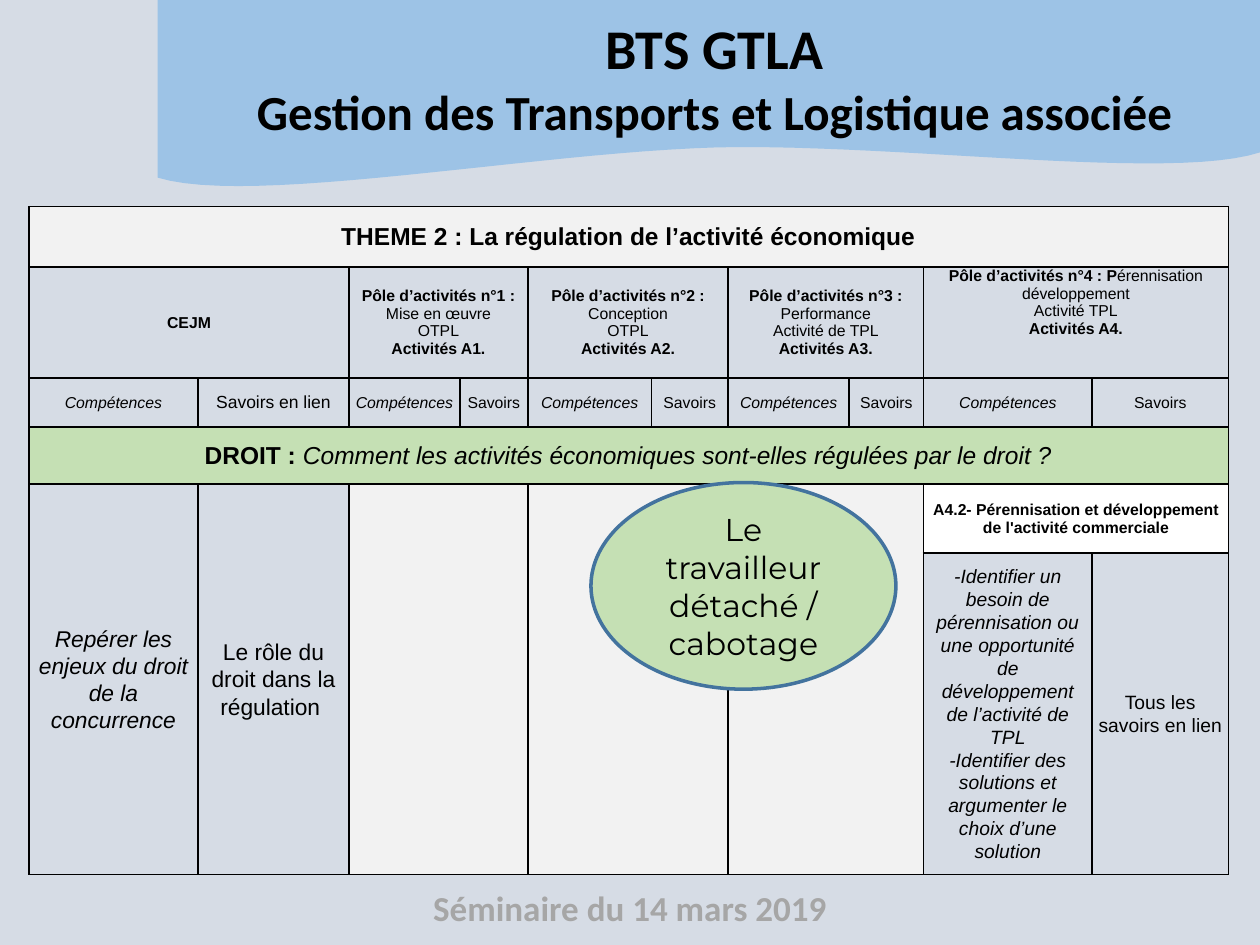
"""Build the BTS GTLA slide that links the law theme to the activity poles."""
import dataclasses
import typing

import lxml.etree
import pptx
import pptx.dml.color
import pptx.enum.shapes
import pptx.enum.text
import pptx.oxml
import pptx.oxml.ns
import pptx.util

RGB = pptx.dml.color.RGBColor
BACKGROUND = RGB(0xD6, 0xDC, 0xE5)
WAVE_BLUE = RGB(0x9D, 0xC3, 0xE6)
BLACK = RGB(0, 0, 0)
WHITE = RGB(0xFF, 0xFF, 0xFF)
FOOTER_GREY = RGB(0xA6, 0xA6, 0xA6)
PALE_GREY = RGB(0xF2, 0xF2, 0xF2)
GREEN = RGB(0xC5, 0xE0, 0xB4)
OUTLINE_BLUE = RGB(0x43, 0x73, 0x9E)

GRID_COLUMNS, GRID_ROWS = 100, 75
UNIT = pptx.util.Inches(0.1)
COLUMN_WIDTHS = (13.4, 12, 8.8, 5.4, 9.8, 6.1, 9.6, 5.9, 13.4, 10.8)
ROW_HEIGHTS = (4.8, 8.8, 3.9, 4.5, 5.5, 25.5)
MIDDLE = pptx.enum.text.MSO_ANCHOR.MIDDLE
TOP = pptx.enum.text.MSO_ANCHOR.TOP


class Run(typing.NamedTuple):
    text: str
    bold: bool = False
    italic: bool = False
    size: typing.Optional[float] = None


Paragraphs = typing.Sequence[typing.Sequence[Run]]


class Box(typing.NamedTuple):
    left: float
    top: float
    width: float
    height: float


@dataclasses.dataclass(frozen=True)
class Entry:
    row: int
    column: int
    paragraphs: Paragraphs = ()
    size: float = 9
    rows: int = 1
    columns: int = 1
    fill: typing.Optional[RGB] = None
    spacing: float = 1.0
    anchor: typing.Any = MIDDLE


def grid(value: float) -> int:
    return round(value * UNIT)


def place(box: Box) -> list[int]:
    return [grid(value) for value in box]


def write_text(frame, paragraphs: Paragraphs, *, size: float, font: str = "Arial",
               color: RGB = BLACK, spacing: float = 1.0) -> None:
    frame.word_wrap = True
    for index, runs in enumerate(paragraphs):
        paragraph = frame.add_paragraph() if index else frame.paragraphs[0]
        paragraph.alignment = pptx.enum.text.PP_ALIGN.CENTER
        paragraph.line_spacing = spacing
        paragraph.space_before = pptx.util.Pt(0)
        for part in runs:
            run = paragraph.add_run()
            run.text = part.text
            run.font.name = font
            run.font.size = pptx.util.Pt(part.size or size)
            run.font.bold = part.bold
            run.font.italic = part.italic
            run.font.color.rgb = color


def curve(start, first, second, end, steps: int = 24) -> list[tuple[float, float]]:
    return [
        tuple((1 - t) ** 3 * a + 3 * (1 - t) ** 2 * t * b + 3 * (1 - t) * t ** 2 * c + t ** 3 * d
              for a, b, c, d in zip(start, first, second, end))
        for t in (step / steps for step in range(1, steps + 1))
    ]


def draw_wave(slide) -> None:
    right, crest, left = (GRID_COLUMNS, 12.1), (57, 11.7), (12.5, 14.1)
    outline = [(GRID_COLUMNS, 0), right]
    outline += curve(right, (92.9, 14.4), (71.6, 11.4), crest)
    outline += curve(crest, (42.4, 12.1), (19.9, 16.4), left)
    builder = slide.shapes.build_freeform(grid(12.5), 0)
    builder.add_line_segments([(grid(x), grid(y)) for x, y in outline], close=True)
    wave = builder.convert_to_shape()
    wave.shadow.inherit = False
    wave.fill.solid()
    wave.fill.fore_color.rgb = WAVE_BLUE
    wave.line.fill.background()
    slide.shapes.title._element.addprevious(wave._element)


def draw_title(slide) -> None:
    title = slide.shapes.title
    title.left, title.top, title.width, title.height = place(Box(18.8, 0.6, 75.8, 11.1))
    title.text_frame.auto_size = pptx.enum.text.MSO_AUTO_SIZE.NONE
    title.text_frame.vertical_anchor = TOP
    write_text(title.text_frame, [
        [Run("BTS GTLA", bold=True, size=32)],
        [Run("Gestion des Transports et Logistique associée", bold=True)],
    ], size=28, font="Calibri")


def draw_borders(cell) -> None:
    properties = cell._tc.get_or_add_tcPr()
    for index, side in enumerate(("lnL", "lnR", "lnT", "lnB")):
        border = pptx.oxml.parse_xml(
            f'<a:{side} {pptx.oxml.ns.nsdecls("a")} w="{pptx.util.Pt(1)}"><a:solidFill>'
            f'<a:srgbClr val="{BLACK}"/></a:solidFill></a:{side}>')
        properties.insert(index, border)


def fill_entry(table, entry: Entry) -> None:
    cell = table.cell(entry.row, entry.column)
    if entry.rows * entry.columns > 1:
        cell.merge(table.cell(entry.row + entry.rows - 1, entry.column + entry.columns - 1))
    if entry.fill is not None:
        cell.fill.solid()
        cell.fill.fore_color.rgb = entry.fill
    cell.vertical_anchor = entry.anchor
    cell.margin_left = cell.margin_right = pptx.util.Inches(0.05)
    cell.margin_top = cell.margin_bottom = 0
    write_text(cell.text_frame, entry.paragraphs, size=entry.size, spacing=entry.spacing)


def draw_table(slide, entries: typing.Iterable[Entry]) -> None:
    box = Box(2.3, 16.4, sum(COLUMN_WIDTHS), sum(ROW_HEIGHTS))
    table = slide.shapes.add_table(len(ROW_HEIGHTS), len(COLUMN_WIDTHS), *place(box)).table
    table.first_row = table.horz_banding = False
    for column, width in zip(table.columns, COLUMN_WIDTHS):
        column.width = grid(width)
    for row, height in zip(table.rows, ROW_HEIGHTS):
        row.height = grid(height)
    for cell in table.iter_cells():
        cell.fill.background()
    for entry in entries:
        fill_entry(table, entry)
    for cell in table.iter_cells():
        draw_borders(cell)


def table_entries() -> list[Entry]:
    theme = Run("THEME 2 : La régulation de l’activité économique", bold=True)
    entries = [
        Entry(0, 0, [[theme]], 14, columns=10, fill=PALE_GREY),
        Entry(1, 0, [[Run("CEJM", bold=True)]], columns=2),
        Entry(2, 0, [[Run("Compétences", italic=True)]]),
        Entry(2, 1, [[Run("Savoirs en lien")]], 10),
    ]
    poles = (
        ("", ("Mise en œuvre", "OTPL")),
        ("", ("Conception", "OTPL")),
        ("", ("Performance", "Activité de TPL")),
        ("érennisation développement", ("Activité TPL",)),
    )
    for number, (heading_end, lines) in enumerate(poles, 1):
        heading = [Run(f"Pôle d’activités n°{number} :" + (" P" if heading_end else ""), bold=True)]
        if heading_end:
            heading.append(Run(heading_end))
        paragraphs = [heading, *([Run(line)] for line in lines),
                      [Run(f"Activités A{number}.", bold=True)]]
        column = 2 * number
        entries += [
            Entry(1, column, paragraphs, columns=2, anchor=TOP if heading_end else MIDDLE),
            Entry(2, column, [[Run("Compétences", italic=True)]], spacing=1.07),
            Entry(2, column + 1, [[Run("Savoirs")]], spacing=1.07),
        ]
        if not heading_end:
            entries.append(Entry(4, column, rows=2, columns=2, fill=PALE_GREY))
    question = [Run("DROIT : ", bold=True), Run(
        "Comment les activités économiques sont-elles régulées par le droit ?", italic=True)]
    skill = Run("Repérer les enjeux du droit de la concurrence", italic=True)
    activity = Run("A4.2- Pérennisation et développement de l'activité commerciale", bold=True)
    goals = ("-Identifier un besoin de pérennisation ou une opportunité de développement "
             "de l’activité de TPL",
             "-Identifier des solutions et argumenter le choix d’une solution")
    return entries + [
        Entry(3, 0, [question], 14, columns=10, fill=GREEN, spacing=1.07),
        Entry(4, 0, [[skill]], 13, rows=2, spacing=1.07),
        Entry(4, 1, [[Run("Le rôle du droit dans la régulation ")]], 13, rows=2, spacing=1.07),
        Entry(4, 8, [[activity]], columns=2, fill=WHITE, spacing=1.07),
        Entry(5, 8, [[Run(goal, italic=True)] for goal in goals], 11, spacing=1.07),
        Entry(5, 9, [[Run("Tous les savoirs en lien ")]], 11, spacing=1.07),
    ]


def draw_topic(slide) -> None:
    topic = slide.shapes.add_shape(
        pptx.enum.shapes.MSO_SHAPE.OVAL, *place(Box(46.9, 38.3, 24.2, 16.4)))
    topic.shadow.inherit = False
    topic.fill.solid()
    topic.fill.fore_color.rgb = GREEN
    topic.line.color.rgb = OUTLINE_BLUE
    topic.line.width = pptx.util.Pt(2)
    topic.text_frame.vertical_anchor = MIDDLE
    write_text(topic.text_frame, [[Run("Le travailleur détaché / cabotage")]],
               size=18, font="Montserrat")


def main() -> None:
    presentation = pptx.Presentation()
    presentation.slide_width = grid(GRID_COLUMNS)
    presentation.slide_height = grid(GRID_ROWS)
    slide = presentation.slides.add_slide(presentation.slide_layouts[5])
    slide.background.fill.solid()
    slide.background.fill.fore_color.rgb = BACKGROUND
    draw_wave(slide)
    draw_title(slide)
    footer = slide.shapes.add_textbox(*place(Box(25, 69.9, 50, 4.4)))
    write_text(footer.text_frame, [[Run("Séminaire du 14 mars 2019", bold=True)]],
               size=20, font="Calibri", color=FOOTER_GREY)
    draw_table(slide, table_entries())
    draw_topic(slide)
    presentation.save("out.pptx")


if __name__ == "__main__":
    main()
